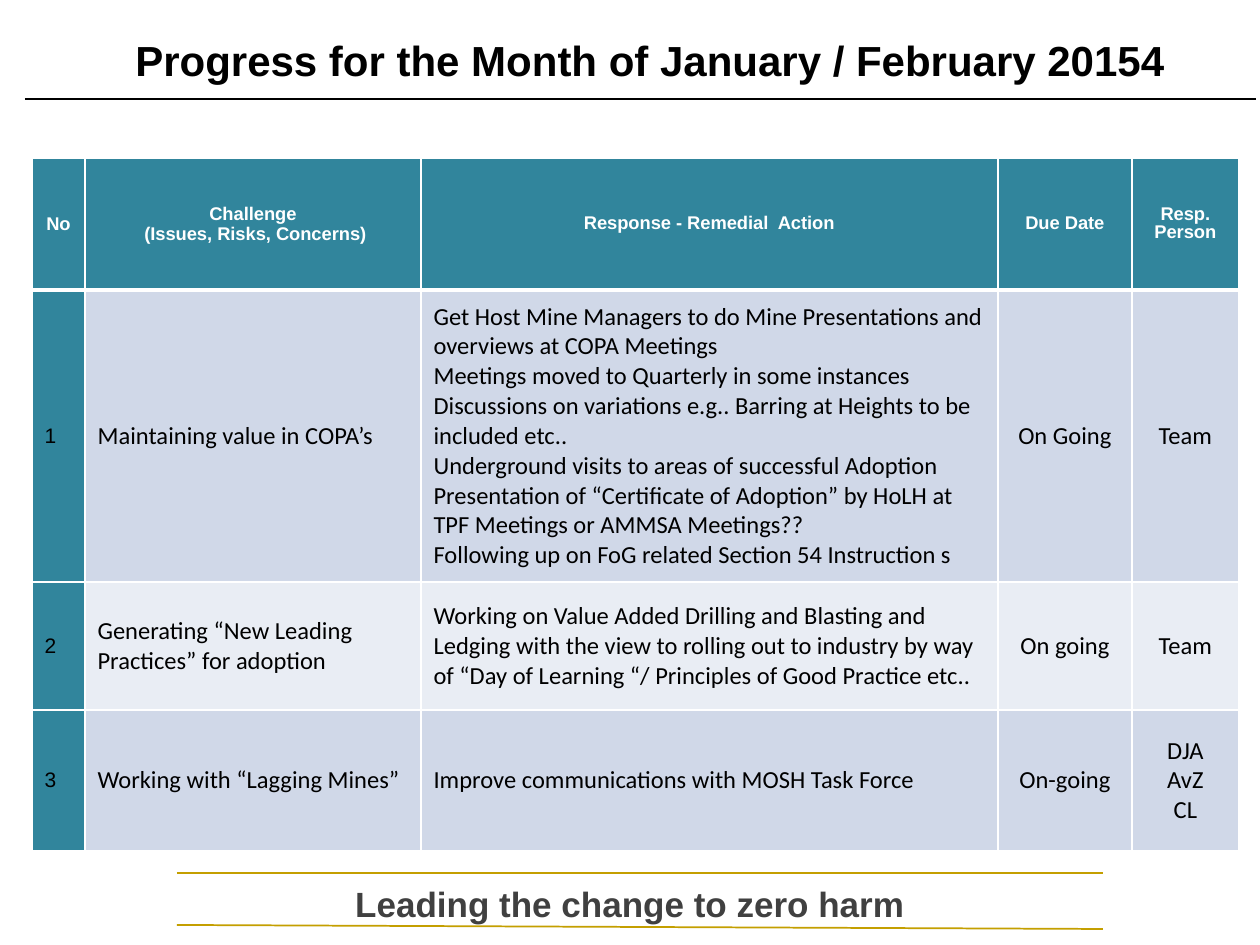
from lxml.etree import SubElement
from pptx import Presentation
from pptx.dml.color import RGBColor
from pptx.enum.shapes import MSO_CONNECTOR
from pptx.enum.text import MSO_ANCHOR, PP_ALIGN
from pptx.oxml import parse_xml
from pptx.oxml.ns import nsdecls, qn
from pptx.util import Emu, Pt

SCALE = 914400 / 126
COLORS = {"black": "000000", "white": "FFFFFF", "teal": "31859C", "gold": "C49F00",
          "grey": "404040", "band": "D0D8E8", "light": "E9EDF4"}


def px(value):
    return Emu(round(value * SCALE))


def write(frame, text, size=14, font="Calibri", color="black", bold=False,
          align=PP_ALIGN.LEFT, spacing=None):
    """Fill a text frame, one paragraph per line of text."""
    frame.word_wrap = True
    for index, line in enumerate(text.split("\n")):
        para = frame.paragraphs[0] if index == 0 else frame.add_paragraph()
        para.alignment = align
        para.line_spacing = spacing
        span = para.add_run()
        span.text = line
        span.font.size = Pt(size)
        span.font.name = font
        span.font.bold = bold
        span.font.color.rgb = RGBColor.from_string(COLORS[color])


deck = Presentation()
deck.slide_width, deck.slide_height = px(1260), px(945)
page = deck.slides.add_slide(deck.slide_layouts[6])

# Rules around the title and the slogan
for x1, y1, x2, y2, color, width in [
    (177, 873, 1103, 873, "gold", 1),
    (177, 925, 1103, 929, "gold", 1),
    (25, 99, 1256, 99, "black", 0.75),
]:
    rule = page.shapes.add_connector(MSO_CONNECTOR.STRAIGHT, px(x1), px(y1), px(x2), px(y2))
    rule.line.color.rgb = RGBColor.from_string(COLORS[color])
    rule.line.width = Pt(width)
    SubElement(rule._element.spPr, qn("a:effectLst"))

# Title and slogan
for left, top, width, height, text, size, color, anchor in [
    (30, 21, 1240, 78, "Progress for the Month of January / February 20154", 24, "black",
     MSO_ANCHOR.MIDDLE),
    (177, 876, 906, 49, "Leading the change to zero harm", 20, "grey", MSO_ANCHOR.TOP),
]:
    box = page.shapes.add_textbox(px(left), px(top), px(width), px(height))
    box.text_frame.vertical_anchor = anchor
    write(box.text_frame, text, size=size, font="Arial", color=color, bold=True,
          align=PP_ALIGN.CENTER)

# Challenge table
column_widths = [53, 336, 577, 134, 107]
row_heights = [132, 292, 128, 141]
rows = [
    ["No", "Challenge\n (Issues, Risks, Concerns)", "Response - Remedial  Action",
     "Due Date", "Resp. Person"],
    ["1", "Maintaining value in COPA’s",
     "Get Host Mine Managers to do Mine Presentations and overviews at COPA Meetings\n"
     "Meetings moved to Quarterly in some instances\n"
     "Discussions on variations e.g.. Barring at Heights to be included etc..\n"
     "Underground visits to areas of successful Adoption\n"
     "Presentation of “Certificate of Adoption” by HoLH at TPF Meetings or AMMSA Meetings??\n"
     "Following up on FoG related Section 54 Instruction s",
     "On Going", "Team"],
    ["2", "Generating “New Leading Practices” for adoption",
     "Working on Value Added Drilling and Blasting and Ledging with the view to rolling out "
     "to industry by way of “Day of Learning “/ Principles of Good Practice etc..",
     "On going", "Team"],
    ["3", "Working with “Lagging Mines”", "Improve communications with MOSH Task Force",
     "On-going", "DJA\nAvZ\nCL"],
]
table = page.shapes.add_table(len(rows), len(column_widths), px(32), px(158),
                              px(sum(column_widths)), px(sum(row_heights))).table
table.first_row = table.horz_banding = False
for column, width in zip(table.columns, column_widths):
    column.width = px(width)
for row, height in zip(table.rows, row_heights):
    row.height = px(height)

for r, texts in enumerate(rows):
    for c, text in enumerate(texts):
        cell = table.cell(r, c)
        cell.vertical_anchor = MSO_ANCHOR.MIDDLE
        align = PP_ALIGN.CENTER if r == 0 or c >= 3 else PP_ALIGN.LEFT
        if r == 0:
            cell.margin_left = cell.margin_right = px(5)
            cell.margin_top = cell.margin_bottom = px(5)
            write(cell.text_frame, text, size=10.5, font="Arial", color="white", bold=True,
                  align=align, spacing=0.9 if c >= 2 else None)
        elif c == 0:
            write(cell.text_frame, text, size=12, font="Arial")
        else:
            write(cell.text_frame, text, align=align)

        fill = "teal" if r == 0 or c == 0 else "band" if r % 2 else "light"
        cell.fill.solid()
        cell.fill.fore_color.rgb = RGBColor.from_string(COLORS[fill])
        properties = cell._tc.get_or_add_tcPr()
        for index, side in enumerate("LRTB"):
            thick = (r, side) in [(0, "B"), (1, "T")]
            properties.insert(index, parse_xml(
                f'<a:ln{side} {nsdecls("a")} w="{Pt(3 if thick else 1)}"><a:solidFill>'
                f'<a:srgbClr val="{COLORS["white"]}"/></a:solidFill></a:ln{side}>'))

deck.save("out.pptx")
